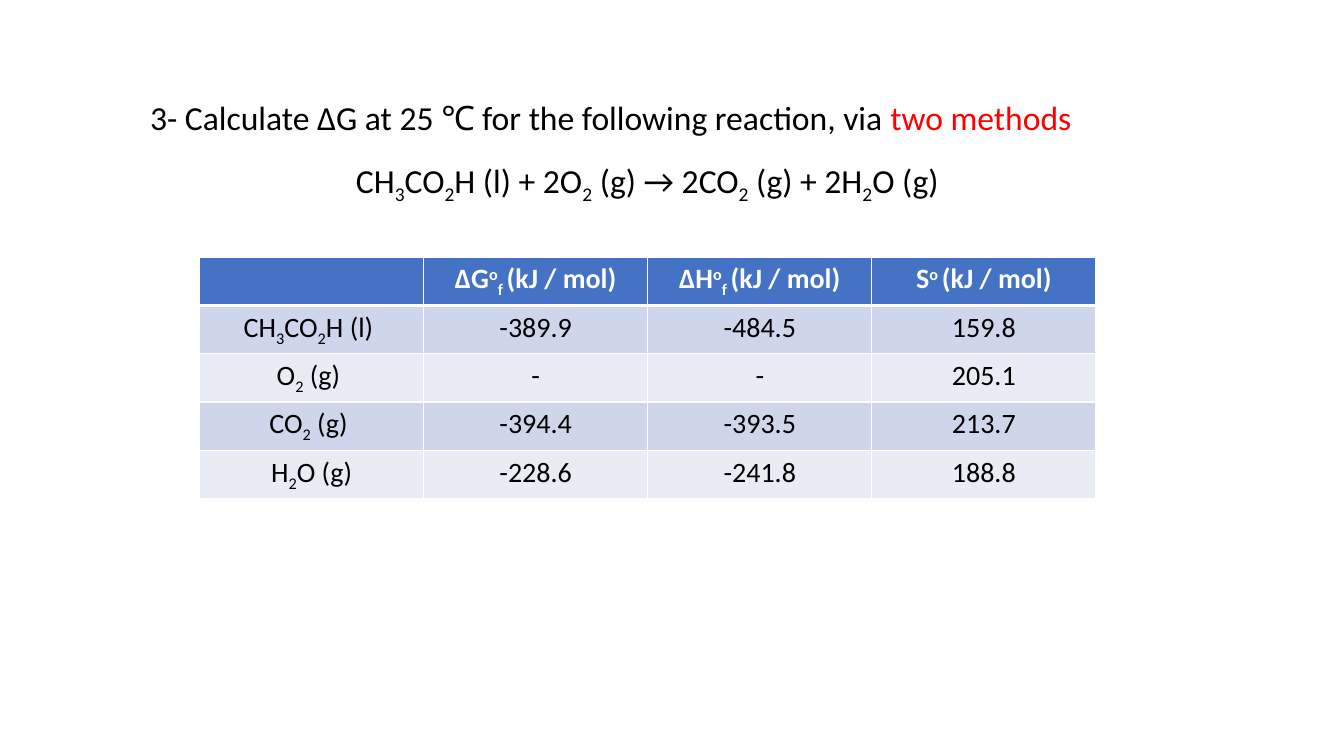
"""Build a slide with a reaction exercise and its thermodynamic data table."""
import dataclasses
import typing

import lxml.etree
import pptx
import pptx.dml.color
import pptx.enum.text
import pptx.oxml.ns
import pptx.util

Inches = pptx.util.Inches


@dataclasses.dataclass(frozen=True)
class Theme:
    font: str = "Calibri"
    question_size: int = 24
    table_size: int = 20
    ink: str = "000000"
    accent: str = "FF0000"
    white: str = "FFFFFF"
    header: str = "4472C4"
    bands: tuple[str, str] = ("CFD5EA", "E9EBF5")
    border: float = 1
    header_border: float = 3


@dataclasses.dataclass(frozen=True)
class Piece:
    markup: str
    color: str


@dataclasses.dataclass(frozen=True)
class Substance:
    formula: str
    gibbs: str
    enthalpy: str
    entropy: str


THEME = Theme()
BASELINES = {"_": "-25000", "^": "30000"}
QUESTION = (
    Piece("3- Calculate ∆G at 25 ℃ for the following reaction, via ", THEME.ink),
    Piece("two methods", THEME.accent),
)
REACTION = (
    Piece("CH|_3|CO|_2|H (l) + 2O|_2| (g) → 2CO|_2| (g) + 2H|_2|O (g)", THEME.ink),
)
HEADINGS = Substance(
    "", "∆G|^o|_f |(kJ / mol)", "∆H|^o|_f |(kJ / mol)", "S|^o |(kJ / mol)"
)
SUBSTANCES = (
    Substance("CH|_3|CO|_2|H (l) ", "-389.9", "-484.5", "159.8"),
    Substance("O|_2| (g) ", "-", "-", "205.1"),
    Substance("CO|_2| (g) ", "-394.4", "-393.5", "213.7"),
    Substance("H|_2|O (g)", "-228.6", "-241.8", "188.8"),
)


def apply_format(target: typing.Any, values: dict[str, typing.Any]) -> None:
    for name, value in values.items():
        setattr(target, name, value)


def write_piece(
    paragraph: typing.Any, piece: Piece, size: int, bold: bool = False
) -> None:
    for part in filter(None, piece.markup.split("|")):
        run = paragraph.add_run()
        baseline = BASELINES.get(part[0])
        run.text = part[1:] if baseline else part
        apply_format(
            run.font,
            {"name": THEME.font, "size": pptx.util.Pt(size), "bold": bold},
        )
        run.font.color.rgb = pptx.dml.color.RGBColor.from_string(piece.color)
        if baseline:
            run.font._element.set("baseline", baseline)


def add_question(slide: typing.Any) -> None:
    box = slide.shapes.add_textbox(
        Inches(1.39), Inches(0.3), Inches(10.06), Inches(3.33)
    )
    frame = box.text_frame
    apply_format(frame, {"word_wrap": True, "margin_top": Inches(0.66)})
    question, reaction = frame.paragraphs[0], frame.add_paragraph()
    apply_format(
        reaction,
        {"alignment": pptx.enum.text.PP_ALIGN.CENTER, "line_spacing": 1.5},
    )
    for paragraph, pieces in ((question, QUESTION), (reaction, REACTION)):
        for piece in pieces:
            write_piece(paragraph, piece, THEME.question_size)


def set_borders(cell: typing.Any, top: float, bottom: float) -> None:
    widths = {"L": THEME.border, "R": THEME.border, "T": top, "B": bottom}
    properties = cell._tc.get_or_add_tcPr()
    for position, (side, width) in enumerate(widths.items()):
        line = lxml.etree.Element(
            pptx.oxml.ns.qn(f"a:ln{side}"), w=str(pptx.util.Pt(width))
        )
        fill = lxml.etree.SubElement(line, pptx.oxml.ns.qn("a:solidFill"))
        lxml.etree.SubElement(fill, pptx.oxml.ns.qn("a:srgbClr"), val=THEME.white)
        properties.insert(position, line)


def fill_cell(cell: typing.Any, markup: str, row: int) -> None:
    is_header = row == 0
    color = THEME.header if is_header else THEME.bands[(row - 1) % 2]
    cell.fill.solid()
    cell.fill.fore_color.rgb = pptx.dml.color.RGBColor.from_string(color)
    set_borders(
        cell,
        top=THEME.header_border if row == 1 else THEME.border,
        bottom=THEME.header_border if is_header else THEME.border,
    )
    paragraph = cell.text_frame.paragraphs[0]
    paragraph.alignment = pptx.enum.text.PP_ALIGN.CENTER
    paragraph.font.size = pptx.util.Pt(THEME.table_size)
    ink = THEME.white if is_header else THEME.ink
    write_piece(paragraph, Piece(markup, ink), THEME.table_size, is_header)


def add_data_table(slide: typing.Any) -> None:
    rows = [dataclasses.astuple(item) for item in (HEADINGS, *SUBSTANCES)]
    table = slide.shapes.add_table(
        len(rows), len(rows[0]),
        Inches(1.98), Inches(2.55), Inches(8.89), Inches(0.41 * len(rows)),
    ).table
    for row, markups in enumerate(rows):
        for column, markup in enumerate(markups):
            fill_cell(table.cell(row, column), markup, row)


def main() -> None:
    presentation = pptx.Presentation()
    apply_format(
        presentation,
        {"slide_width": Inches(13.33), "slide_height": Inches(7.5)},
    )
    slide = presentation.slides.add_slide(presentation.slide_layouts[6])
    add_question(slide)
    add_data_table(slide)
    presentation.save("out.pptx")


if __name__ == "__main__":
    main()
